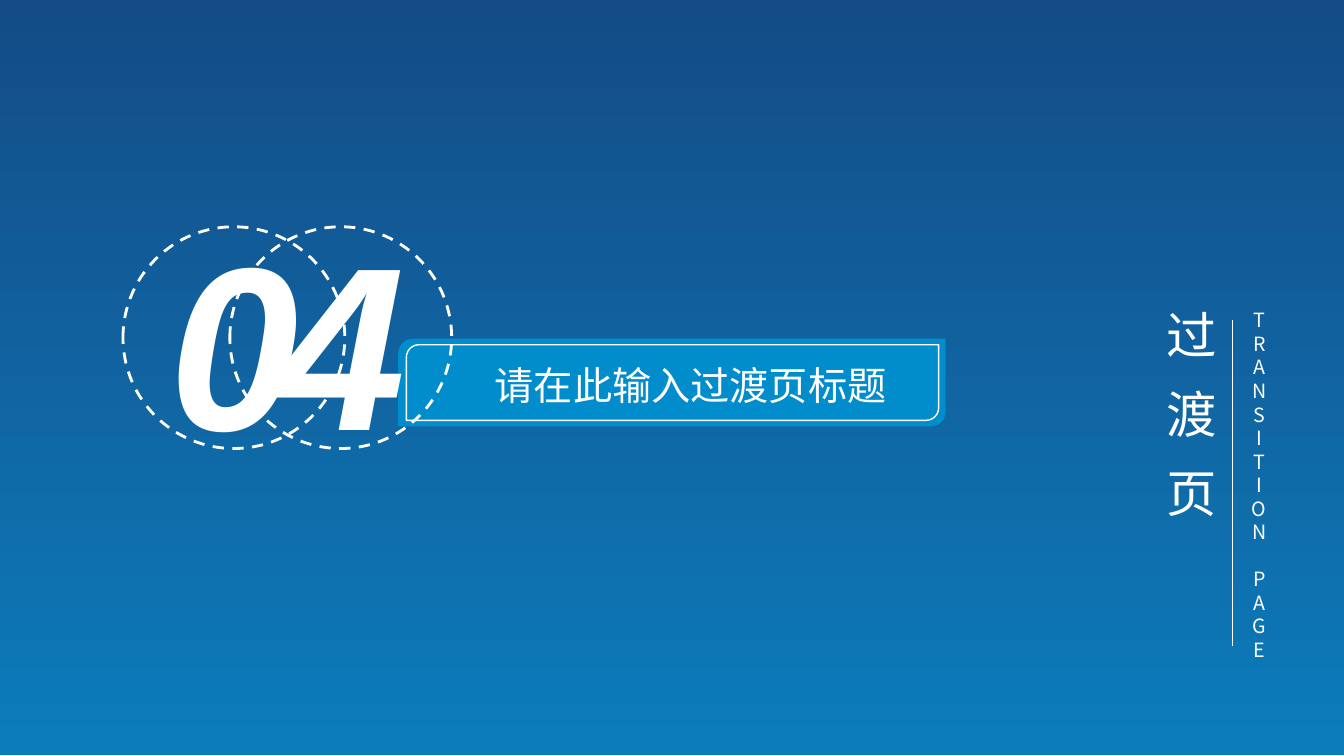
import pptx
import pptx.dml.color
import pptx.enum.dml
import pptx.enum.shapes
import pptx.enum.text
import pptx.oxml
import pptx.oxml.ns
import pptx.util

SHAPES = pptx.enum.shapes.MSO_SHAPE
ALIGN = pptx.enum.text.PP_ALIGN
CJK = "Noto Sans CJK SC"


def px(length):
    """Turn px, a hundred to the inch, into EMU."""
    return pptx.util.Emu(length * 9144)


def color(value):
    """Turn a hex string into a colour."""
    return pptx.dml.color.RGBColor.from_string(value)


def write(frame, text, size, font="Arial", ink="FFFFFF", bold=False, italic=False,
          align=None, tracking=0, leading=None):
    """Write one paragraph per line; a blank line becomes space before the next one."""
    paragraph = None
    for block in text.split("\n\n"):
        for index, line in enumerate(block.split("\n")):
            opens_block = paragraph is not None and index == 0
            paragraph = frame.paragraphs[0] if paragraph is None else frame.add_paragraph()
            paragraph.alignment = align
            if leading:
                paragraph.line_spacing = pptx.util.Pt(leading)
            if opens_block:
                paragraph.space_before = pptx.util.Pt(leading or size)
            run = paragraph.add_run()
            run.text = line
            run.font.size = pptx.util.Pt(size)
            run.font.name = font
            run.font.bold = bold
            run.font.italic = italic
            run.font.color.rgb = color(ink)
            properties = run.font._element
            if tracking:
                properties.set("spc", str(tracking * 100))
            east_asian = pptx.oxml.parse_xml(
                f'<a:ea {pptx.oxml.ns.nsdecls("a")} typeface="{font}"/>')
            properties.find(pptx.oxml.ns.qn("a:latin")).addnext(east_asian)


class Painter:
    """Holds the style and the current slide."""

    white = "FFFFFF"
    banner = "018CCC"
    sky = ("144C87", "0C7CBB")

    def __init__(self, slide):
        """Keep the slide to draw on."""
        self.slide = slide

    def shape(self, kind, left, top, width, height, fill=None, line=None, weight=1, dash=None):
        """Add a preset shape with an optional fill and outline."""
        shape = self.slide.shapes.add_shape(kind, px(left), px(top), px(width), px(height))
        shape.shadow.inherit = False
        if fill:
            shape.fill.solid()
            shape.fill.fore_color.rgb = color(fill)
        else:
            shape.fill.background()
        if line:
            shape.line.color.rgb = color(line)
            shape.line.width = pptx.util.Pt(weight)
            shape.line.dash_style = dash
        else:
            shape.line.fill.background()
        return shape

    def backdrop(self, width, height):
        """Add the vertical gradient behind everything."""
        shape = self.shape(SHAPES.RECTANGLE, 0, 0, width, height)
        shape.fill.gradient()
        shape.fill.gradient_angle = 270
        for stop, tint, position in zip(shape.fill.gradient_stops, self.sky, (0, 1)):
            stop.color.rgb = color(tint)
            stop.position = position

    def digit(self, text, left, top, diameter):
        """Add a large numeral in a dashed ring."""
        ring = self.shape(SHAPES.OVAL, left, top, diameter, diameter, line=self.white,
                          weight=2, dash=pptx.enum.dml.MSO_LINE.DASH)
        ring.text_frame.vertical_anchor = pptx.enum.text.MSO_ANCHOR.MIDDLE
        write(ring.text_frame, text, 166, bold=True, italic=True, align=ALIGN.CENTER)

    def text(self, text, left, top, width, height, wrap=True, vertical=False, **style):
        """Add a text box that grows with its text."""
        box = self.slide.shapes.add_textbox(px(left), px(top), px(width), px(height))
        frame = box.text_frame
        frame.word_wrap = wrap
        frame.auto_size = pptx.enum.text.MSO_AUTO_SIZE.SHAPE_TO_FIT_TEXT
        if vertical:
            frame._txBody.bodyPr.set("vert", "eaVert")
        write(frame, text, **style)

    def rule(self, x, top, bottom):
        """Add a thin vertical line."""
        line = self.slide.shapes.add_connector(
            pptx.enum.shapes.MSO_CONNECTOR.STRAIGHT, px(x), px(top), px(x), px(bottom))
        line.line.color.rgb = color(self.white)
        line.line.width = pptx.util.Pt(0.75)
        line._element.spPr.append(
            pptx.oxml.parse_xml(f'<a:effectLst {pptx.oxml.ns.nsdecls("a")}/>'))


def main():
    """Build the transition slide."""
    presentation = pptx.Presentation()
    presentation.slide_width, presentation.slide_height = px(1333), px(750)
    painter = Painter(presentation.slides.add_slide(presentation.slide_layouts[6]))

    painter.backdrop(1333, 749)
    painter.shape(SHAPES.ROUND_2_DIAG_RECTANGLE, 395, 336, 543, 87, fill=painter.banner)
    painter.shape(SHAPES.ROUND_2_DIAG_RECTANGLE, 403, 342, 528, 75, line=painter.white)
    painter.text("请在此输入过渡页标题", 481, 354, 430, 57, size=28)
    painter.digit("4", 228, 225, 220)

    painter.text("过 渡 页", 1134, 298, 81, 400, vertical=True, size=36, font=CJK, tracking=6)
    letters = "\n\n".join("\n".join(word) for word in ("TRANSITION", "PAGE"))
    painter.text(letters, 1227, 301, 44, 364, wrap=False, size=14, font=CJK,
                 align=ALIGN.CENTER, tracking=6, leading=16.8)
    painter.rule(1222, 317, 641)
    painter.digit("0", 122, 225, 220)

    presentation.save("out.pptx")


if __name__ == "__main__":
    main()
